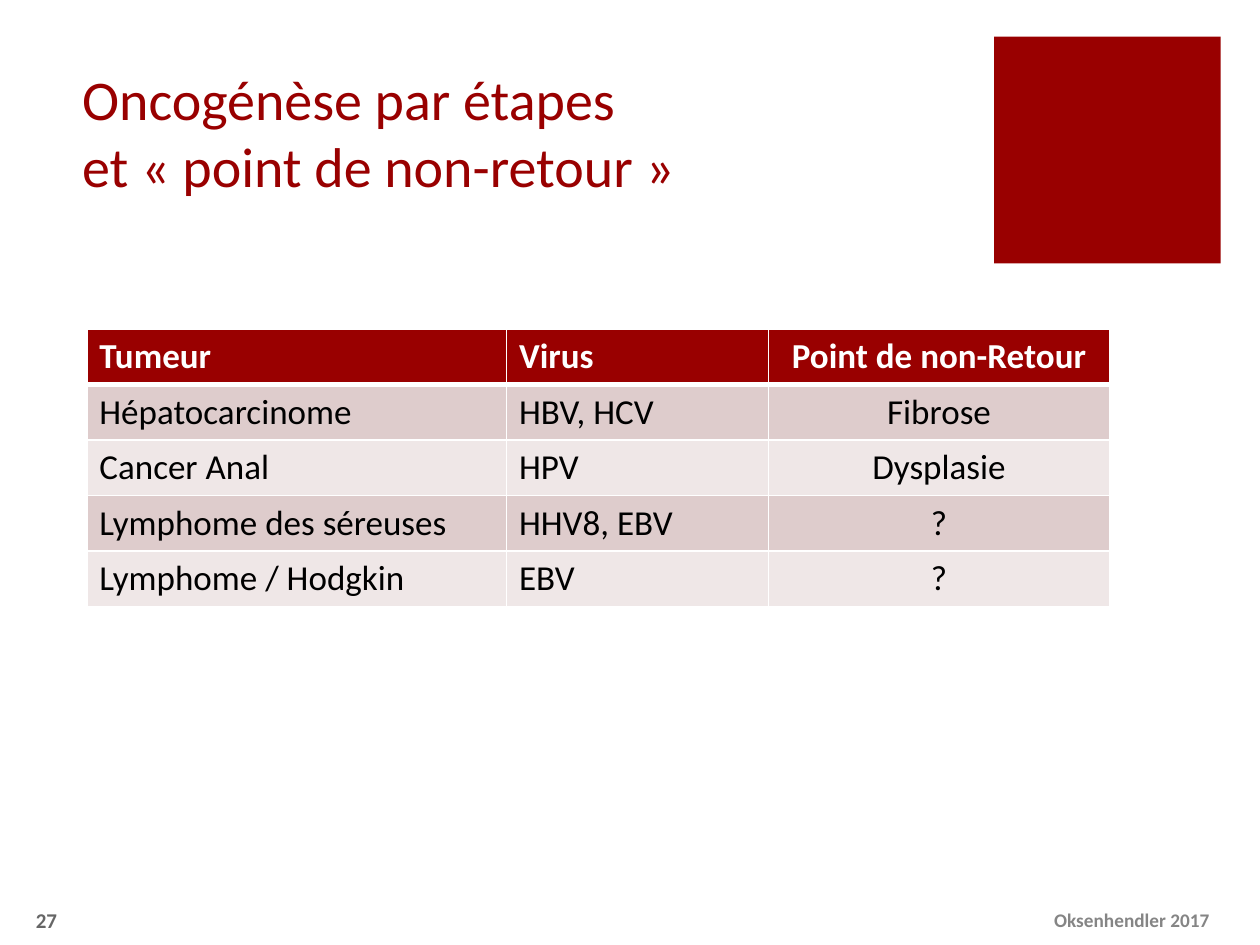
from lxml.etree import SubElement
from pptx import Presentation
from pptx.dml.color import RGBColor
from pptx.enum.shapes import MSO_SHAPE
from pptx.enum.text import MSO_ANCHOR, MSO_AUTO_SIZE, PP_ALIGN
from pptx.oxml.ns import qn
from pptx.util import Cm, Pt

RED = "990000"
WHITE = "FFFFFF"
BANDS = ("DECCCC", "EFE7E7")
WIDTHS = (8.46, 5.28, 6.88)
ROWS = (
    ("Tumeur", "Virus", "Point de non-Retour"),
    ("Hépatocarcinome", "HBV, HCV", "Fibrose"),
    ("Cancer Anal", "HPV", "Dysplasie"),
    ("Lymphome des séreuses", "HHV8, EBV", "?"),
    ("Lymphome / Hodgkin", "EBV", "?"),
)


def paint(fmt, color):
    """Fill with a solid colour."""
    fmt.solid()
    fmt.fore_color.rgb = RGBColor.from_string(color)


def add_run(para, text, size, color, bold=False):
    """Add one formatted run to a paragraph."""
    run = para.add_run()
    run.text = text
    font = run.font
    font.name, font.size, font.bold = "Calibri", Pt(size), bold
    font.color.rgb = RGBColor.from_string(color)


def add_square(slide):
    """Draw the red square in the corner."""
    box = slide.shapes.add_shape(
        MSO_SHAPE.RECTANGLE, Cm(20.04), Cm(0.74), Cm(4.57), Cm(4.57))
    box.shadow.inherit = False
    paint(box.fill, RED)
    box.line.fill.background()


def set_title(slide, lines):
    """Place the title and write its lines."""
    title = slide.shapes.title
    title.left, title.top = Cm(1.4), Cm(0.97)
    title.width, title.height = Cm(18.08), Cm(3.17)
    frame = title.text_frame
    frame.auto_size = MSO_AUTO_SIZE.NONE
    frame.word_wrap = True
    frame.vertical_anchor = MSO_ANCHOR.BOTTOM
    para = frame.paragraphs[0]
    para.alignment = PP_ALIGN.LEFT
    for i, line in enumerate(lines):
        if i:
            para.add_line_break()
        add_run(para, line, 32, RED)


def add_edges(cell, head):
    """Give a cell white borders, thicker below the header."""
    props = cell._tc.get_or_add_tcPr()
    for i, side in enumerate(("lnL", "lnR", "lnT", "lnB")):
        width = Pt(3 if head and side == "lnB" else 1)
        line = props.makeelement(qn(f"a:{side}"), {"w": str(int(width))})
        fill = SubElement(line, qn("a:solidFill"))
        SubElement(fill, qn("a:srgbClr"), val=WHITE)
        props.insert(i, line)


def add_grid(slide):
    """Add the table of tumours and viruses."""
    high = Cm(1.12)
    grid = slide.shapes.add_table(
        len(ROWS), len(WIDTHS), Cm(1.75), Cm(6.63),
        Cm(sum(WIDTHS)), high * len(ROWS)).table
    for col, width in zip(grid.columns, WIDTHS):
        col.width = Cm(width)
    for i, row in enumerate(ROWS):
        grid.rows[i].height = high
        head = i == 0
        for j, text in enumerate(row):
            cell = grid.cell(i, j)
            paint(cell.fill, RED if head else BANDS[(i - 1) % 2])
            add_edges(cell, head or None)
            para = cell.text_frame.paragraphs[0]
            para.alignment = PP_ALIGN.CENTER if j == 2 else PP_ALIGN.LEFT
            add_run(para, text, 20, WHITE if head else "000000", head)


def add_note(slide, left, width, text, size, color, align):
    """Add a bold text at the foot of the slide."""
    box = slide.shapes.add_textbox(Cm(left), Cm(18.03), Cm(width), Cm(1.02))
    frame = box.text_frame
    frame.word_wrap = True
    frame.vertical_anchor = MSO_ANCHOR.MIDDLE
    para = frame.paragraphs[0]
    para.alignment = align
    add_run(para, text, size, color, True)


def main():
    """Build and save the slide."""
    deck = Presentation()
    deck.slide_width, deck.slide_height = Cm(25.4), Cm(19.05)
    slide = deck.slides.add_slide(deck.slide_layouts[5])
    add_square(slide)
    set_title(slide, ("Oncogénèse par étapes ", "et « point de non-retour »"))
    add_grid(slide)
    add_note(slide, 21, 4.4, "Oksenhendler 2017", 11, "858585", PP_ALIGN.LEFT)
    add_note(slide, 0, 1.4, "27", 12, "666666", PP_ALIGN.RIGHT)
    deck.save("out.pptx")


if __name__ == "__main__":
    main()
